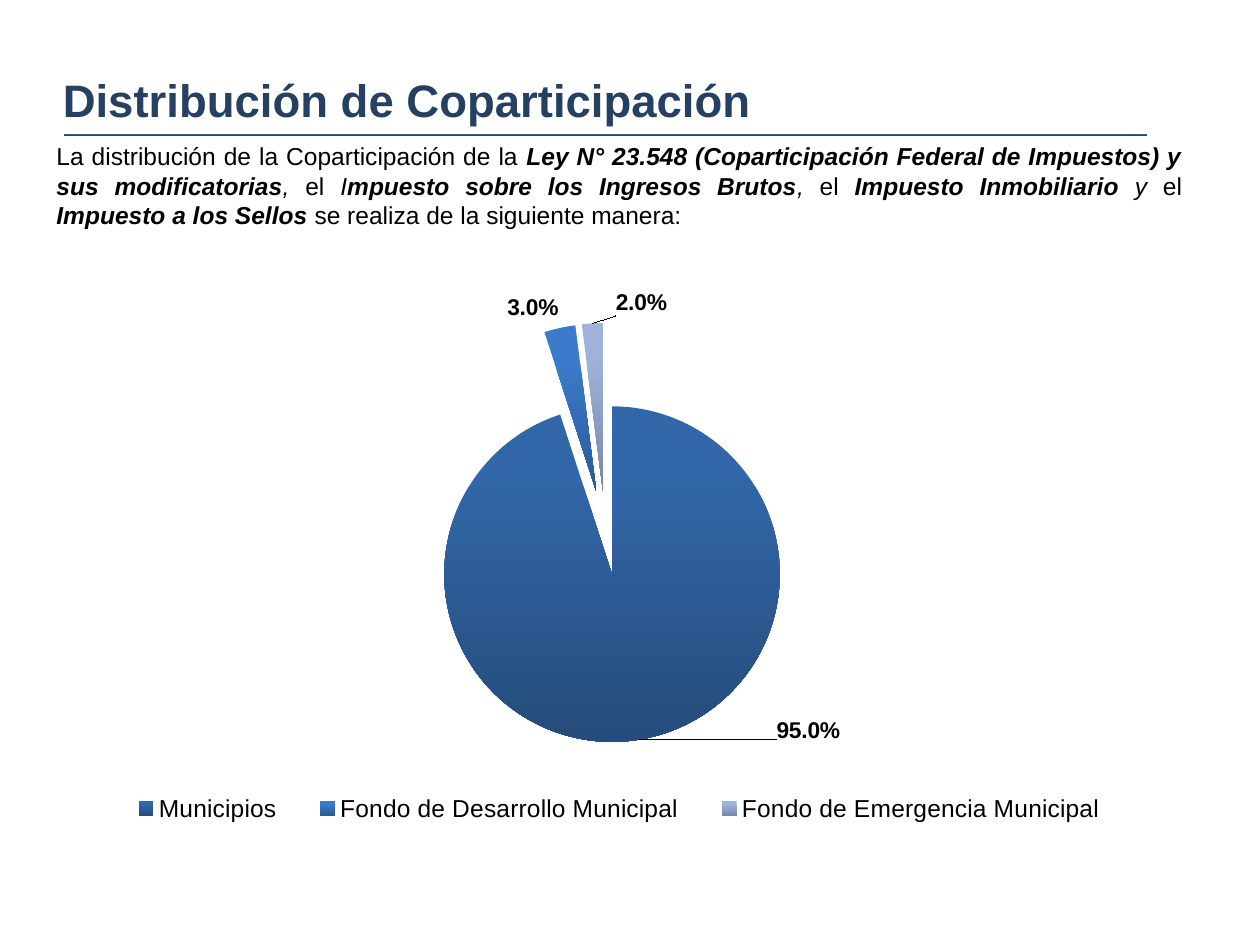
import pptx
import pptx.chart.data
import pptx.dml.color
import pptx.enum.chart
import pptx.enum.shapes
import pptx.enum.text
import pptx.oxml
import pptx.oxml.ns
import pptx.util

BLACK = pptx.dml.color.RGBColor(0x00, 0x00, 0x00)
WHITE = pptx.dml.color.RGBColor(0xFF, 0xFF, 0xFF)
NAVY = pptx.dml.color.RGBColor(0x25, 0x40, 0x61)
RULE_BLUE = pptx.dml.color.RGBColor(0x1F, 0x49, 0x7D)
GRADIENTS = [
    (pptx.dml.color.RGBColor(0x31, 0x67, 0xA8), pptx.dml.color.RGBColor(0x25, 0x4C, 0x7B)),
    (pptx.dml.color.RGBColor(0x3C, 0x7B, 0xCC), pptx.dml.color.RGBColor(0x2A, 0x59, 0x96)),
    (pptx.dml.color.RGBColor(0x9F, 0xB3, 0xDA), pptx.dml.color.RGBColor(0x76, 0x86, 0xA8)),
]
SHARES = {
    "Municipios": 95,
    "Fondo de Desarrollo Municipal": 3,
    "Fondo de Emergencia Municipal": 2,
}
LABEL_SHIFTS = {0: (0.125, -0.04), 2: (0.045, 0)}
INTRO = [
    ("La distribución de la Coparticipación de la ", False, False),
    ("Ley N° 23.548 (Coparticipación Federal de Impuestos) y sus modificatorias", True, True),
    (", ", False, True),
    ("el ", False, False),
    ("I", False, True),
    ("mpuesto sobre los Ingresos Brutos", True, True),
    (", ", False, True),
    ("el ", False, False),
    ("Impuesto Inmobiliario", True, True),
    (" y ", False, True),
    ("el ", False, False),
    ("Impuesto a los Sellos ", True, True),
    ("se realiza de la siguiente manera:", False, False),
]


class Page:
    """Draws styled elements on one slide, with lengths in shares of its size."""

    font = "Arial"

    def __init__(self, deck):
        self.width, self.height = deck.slide_width, deck.slide_height
        self.shapes = deck.slides.add_slide(deck.slide_layouts[6]).shapes

    def place(self, left, top, width, height):
        return (int(left * self.width), int(top * self.height),
                int(width * self.width), int(height * self.height))

    def style(self, font, size, color=BLACK, bold=False, italic=False):
        font.name, font.size = self.font, pptx.util.Pt(size)
        font.bold, font.italic = bold, italic
        font.color.rgb = color

    def title(self, area, text):
        box = self.shapes.add_shape(pptx.enum.shapes.MSO_SHAPE.RECTANGLE, *self.place(*area))
        box.shadow.inherit = False
        box.fill.solid()
        box.fill.fore_color.rgb = WHITE
        box.line.fill.background()
        box.text_frame.text = text
        box.text_frame.vertical_anchor = pptx.enum.text.MSO_ANCHOR.TOP
        para = box.text_frame.paragraphs[0]
        para.alignment = pptx.enum.text.PP_ALIGN.LEFT
        self.style(para.runs[0].font, 26, NAVY, bold=True)

    def paragraph(self, area, spans):
        box = self.shapes.add_textbox(*self.place(*area))
        box.text_frame.word_wrap = True
        para = box.text_frame.paragraphs[0]
        para.alignment = pptx.enum.text.PP_ALIGN.JUSTIFY
        for text, bold, italic in spans:
            span = para.add_run()
            span.text = text
            self.style(span.font, 14, bold=bold, italic=italic)

    def rule(self, left, right, top):
        start, level, length, _ = self.place(left, top, right - left, 0)
        line = self.shapes.add_connector(
            pptx.enum.shapes.MSO_CONNECTOR.STRAIGHT, start, level, start + length, level)
        line.line.color.rgb = RULE_BLUE
        line.line.width = pptx.util.Pt(1.5)
        line._element.spPr.append(pptx.oxml.parse_xml(
            f'<a:effectLst {pptx.oxml.ns.nsdecls("a")}/>'))

    def layout(self, x, y, size=None, inner=False):
        values = {"x": x, "y": y}
        parts = '<c:layoutTarget val="inner"/>' if inner else ""
        if size:
            parts += '<c:xMode val="edge"/><c:yMode val="edge"/>'
            values.update(w=size[0], h=size[1])
        parts += "".join(f'<c:{name} val="{value}"/>' for name, value in values.items())
        return pptx.oxml.parse_xml(
            f'<c:layout {pptx.oxml.ns.nsdecls("c")}><c:manualLayout>{parts}'
            '</c:manualLayout></c:layout>')

    def pie(self, area, shares):
        data = pptx.chart.data.CategoryChartData()
        data.categories = list(shares)
        data.add_series("Series 1", list(shares.values()))
        chart = self.shapes.add_chart(
            pptx.enum.chart.XL_CHART_TYPE.PIE_EXPLODED, *self.place(*area), data).chart
        chart.has_title = False
        self.style(chart.font, 14)
        chart.has_legend = True
        legend = chart.legend
        legend.position = pptx.enum.chart.XL_LEGEND_POSITION.BOTTOM
        legend.include_in_layout = False
        self.style(legend.font, 14)
        self.set_layout(legend._element, "c:legendPos", self.layout(0.03, 0.77, (0.94, 0.08)))
        plot = chart.plots[0]
        plot.vary_by_categories = True
        area_element = plot._element.getparent()
        for old in area_element.findall(pptx.oxml.ns.qn("c:layout")):
            area_element.remove(old)
        area_element.insert(0, self.layout(0.007, 0.134, (0.961, 0.584), inner=True))
        series = plot.series[0]
        for explosion in series._element.findall(pptx.oxml.ns.qn("c:explosion")):
            explosion.set("val", "25")
        self.percent_labels(series)
        for index, (upper, lower) in enumerate(GRADIENTS):
            self.slice(series.points[index], upper, lower)

    def set_layout(self, element, previous, layout):
        for old in element.findall(pptx.oxml.ns.qn("c:layout")):
            element.remove(old)
        element.find(pptx.oxml.ns.qn(previous)).addnext(layout)

    def percent_labels(self, series):
        labels = series.data_labels
        labels.show_value, labels.show_percentage = False, True
        labels.number_format, labels.number_format_is_linked = "0.0%", False
        labels.position = pptx.enum.chart.XL_LABEL_POSITION.OUTSIDE_END
        self.style(labels.font, 13, bold=True)
        for index, (x, y) in LABEL_SHIFTS.items():
            label = series.points[index].data_label
            label.position = pptx.enum.chart.XL_LABEL_POSITION.OUTSIDE_END
            self.style(label.font, 13, bold=True)
            element = labels._element.xpath(f"c:dLbl[c:idx/@val={index}]")[0]
            element.find(pptx.oxml.ns.qn("c:showVal")).set("val", "0")
            element.find(pptx.oxml.ns.qn("c:showPercent")).set("val", "1")
            self.set_layout(element, "c:idx", self.layout(x, y))
            element.find(pptx.oxml.ns.qn("c:layout")).addnext(pptx.oxml.parse_xml(
                f'<c:numFmt {pptx.oxml.ns.nsdecls("c")} formatCode="0.0%" sourceLinked="0"/>'))

    def slice(self, point, upper, lower):
        fill = point.format.fill
        fill.gradient()
        fill.gradient_angle = 270
        for stop, color, position in zip(fill.gradient_stops, (upper, lower), (0.2, 1)):
            stop.color.rgb, stop.position = color, position
        point.format.line.fill.background()


def main():
    deck = pptx.Presentation()
    deck.slide_width, deck.slide_height = pptx.util.Inches(10), pptx.util.Inches(7.5)
    page = Page(deck)
    page.pie((0.056, 0.24, 0.871, 0.76), SHARES)
    page.paragraph((0.035, 0.143, 0.913, 0.108), INTRO)
    page.rule(0.051, 0.91, 0.143)
    page.title((0.04, 0.07, 0.882, 0.072), "Distribución de Coparticipación")
    deck.save("out.pptx")


if __name__ == "__main__":
    main()
